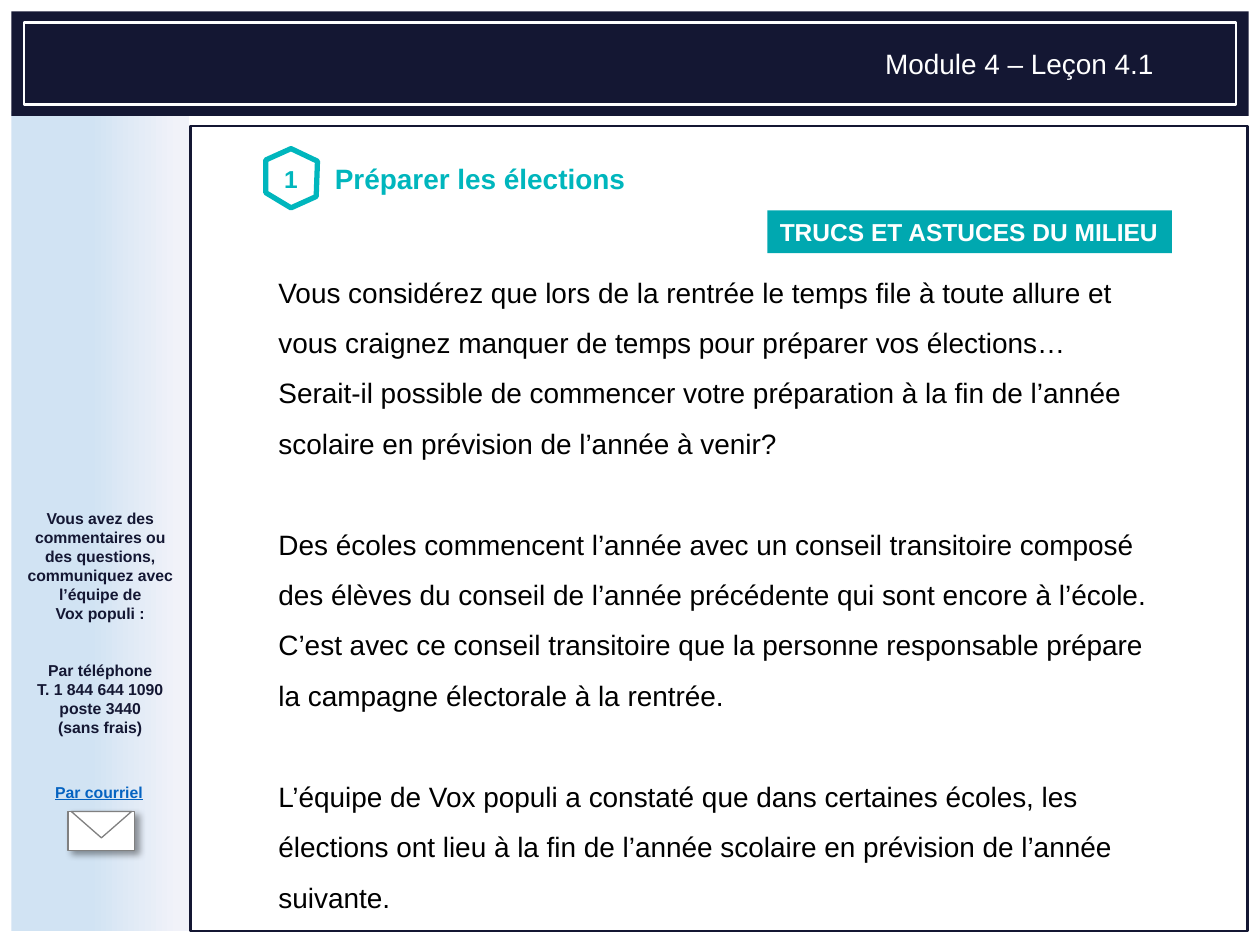
import pptx
import pptx.dml.color
import pptx.enum.shapes
import pptx.enum.text
import pptx.oxml
import pptx.oxml.ns
import pptx.util
from lxml import etree

Inches = pptx.util.Inches
Pt = pptx.util.Pt
RGBColor = pptx.dml.color.RGBColor
MSO_SHAPE = pptx.enum.shapes.MSO_SHAPE
PP_ALIGN = pptx.enum.text.PP_ALIGN
MSO_ANCHOR = pptx.enum.text.MSO_ANCHOR

NAVY = RGBColor(0x14, 0x17, 0x33)
WHITE = RGBColor(0xFF, 0xFF, 0xFF)
BLACK = RGBColor(0, 0, 0)
TEAL = RGBColor(0x00, 0xB6, 0xBD)
BANNER = RGBColor(0x00, 0xA8, 0xB0)
LINK = RGBColor(0x05, 0x63, 0xC1)
GRAY = RGBColor(0x80, 0x80, 0x80)
PALE_BLUE = RGBColor(0xD1, 0xE3, 0xF3)
PALE_LILAC = RGBColor(0xF1, 0xF2, 0xF9)

CONTACT = [
    "Vous avez des commentaires ou des questions, communiquez avec l’équipe de\vVox populi :",
    "Par téléphone\vT. 1 844 644 1090\vposte 3440\v(sans frais)",
]
BODY = [
    "Vous considérez que lors de la rentrée le temps file à toute allure et vous craignez "
    "manquer de temps pour préparer vos élections…\vSerait-il possible de commencer votre "
    "préparation à la fin de l’année scolaire en prévision de l’année à venir?",
    "Des écoles commencent l’année avec un conseil transitoire composé des élèves du conseil "
    "de l’année précédente qui sont encore à l’école. C’est avec ce conseil transitoire que "
    "la personne responsable prépare la campagne électorale à la rentrée.",
    "L’équipe de Vox populi a constaté que dans certaines écoles, les élections ont lieu à la "
    "fin de l’année scolaire en prévision de l’année suivante.",
]


def add_box(s, x, y, w, h, fill=None, line=None, width=1.5, kind=MSO_SHAPE.RECTANGLE):
    sp = s.shapes.add_shape(kind, Inches(x), Inches(y), Inches(w), Inches(h))
    sp.shadow.inherit = False
    if fill is None:
        sp.fill.background()
    else:
        sp.fill.solid()
        sp.fill.fore_color.rgb = fill
    if line is None:
        sp.line.fill.background()
    else:
        sp.line.color.rgb = line
        sp.line.width = Pt(width)
    return sp


def set_text(sp, paragraphs, size, color, bold=False, align=PP_ALIGN.LEFT,
             anchor=MSO_ANCHOR.TOP, wrap=True, gap=0, spacing=None):
    tf = sp.text_frame
    tf.word_wrap = wrap
    tf.vertical_anchor = anchor
    tf.text = "\n".join(paragraphs)
    for i, p in enumerate(tf.paragraphs):
        p.alignment = align
        p.line_spacing = spacing
        p.space_before = Pt(gap if i else 0)
        for r in p.runs:
            r.font.name = "Arial"
            r.font.size = Pt(size)
            r.font.bold = bold
            r.font.color.rgb = color


def add_text(s, x, y, w, h, paragraphs, size, color, **style):
    sp = s.shapes.add_textbox(Inches(x), Inches(y), Inches(w), Inches(h))
    set_text(sp, paragraphs, size, color, **style)
    return sp


def add_header(s, x, y, w, h):
    margin = 0.09
    add_box(s, x, y, w, h, fill=NAVY)
    add_box(s, x + 0.1, y + margin, w - 0.2, h - 2 * margin, line=WHITE)
    add_text(s, x + w - 3.03, y + 0.23, 2.42, 0.37, ["Module 4 – Leçon 4.1"],
             16, WHITE, align=PP_ALIGN.CENTER)


def add_envelope(s, x, y, w, h):
    sp = add_box(s, x, y, w, h, fill=WHITE, line=GRAY, width=0.75)
    effects = sp._element.spPr.find(pptx.oxml.ns.qn("a:effectLst"))
    effects.append(pptx.oxml.parse_xml(
        f'<a:outerShdw {pptx.oxml.ns.nsdecls("a")} blurRad="{Pt(4)}" dist="{Pt(3)}" '
        'dir="2700000" algn="tl" rotWithShape="0"><a:srgbClr val="000000">'
        '<a:alpha val="40000"/></a:srgbClr></a:outerShdw>'))
    flap = add_box(s, x + 0.025, y, w - 0.05, 0.21, fill=WHITE, line=GRAY, width=0.75,
                   kind=MSO_SHAPE.ISOSCELES_TRIANGLE)
    flap._element.spPr.get_or_add_xfrm().set("flipV", "1")


def add_sidebar(s, x, y, w, h):
    sp = add_box(s, x, y, w, h, fill=PALE_BLUE)
    sp.fill.gradient()
    sp.fill.gradient_angle = 0
    stops = [(0.44, PALE_BLUE), (0.94, PALE_LILAC)]
    for stop, (position, color) in zip(sp.fill.gradient_stops, stops):
        stop.position = position
        stop.color.rgb = color
    add_text(s, x, y + 3.11, w, 1.92, CONTACT, 9, NAVY, bold=True,
             align=PP_ALIGN.CENTER, gap=22)
    mail = add_text(s, x + 0.25, y + 5.28, 0.9, 0.25, ["Par courriel"], 9, LINK,
                    bold=True, wrap=False)
    mail.text_frame.paragraphs[0].runs[0].font.underline = True
    add_envelope(s, x + 0.45, y + 5.56, 0.53, 0.31)


def add_heading(s, x, y, number, label):
    outline = [(20, 0), (41, 10), (40, 38), (20, 47), (0, 35), (0, 9)]
    left, top = round(x * 100), round(y * 100)
    points = [(left + dx, top + dy) for dx, dy in outline]
    fb = s.shapes.build_freeform(*points[0], scale=Inches(0.01))
    fb.add_line_segments(points[1:], close=True)
    sp = fb.convert_to_shape()
    sp.shadow.inherit = False
    sp.fill.solid()
    sp.fill.fore_color.rgb = WHITE
    sp.line.color.rgb = TEAL
    sp.line.width = Pt(3)
    etree.SubElement(sp.line._ln, pptx.oxml.ns.qn("a:round"))
    add_text(s, x + 0.03, y + 0.07, 0.34, 0.34, [number], 14, TEAL, bold=True,
             align=PP_ALIGN.CENTER, anchor=MSO_ANCHOR.MIDDLE)
    add_text(s, x + 0.45, y + 0.07, 3, 0.33, [label], 16, TEAL, bold=True,
             anchor=MSO_ANCHOR.MIDDLE)


def add_content(s, x, y, w, h):
    add_box(s, x, y, w, h, line=NAVY)
    sp = s.shapes.title
    sp.left, sp.top = Inches(x + 0.6), Inches(y + 1)
    sp.width, sp.height = Inches(w - 1.2), Inches(4.43)
    set_text(sp, BODY, 16, BLACK, gap=29, spacing=1.5)
    sp.text_frame.auto_size = pptx.enum.text.MSO_AUTO_SIZE.NONE
    add_heading(s, x + 0.6, y + 0.18, "1", "Préparer les élections")
    banner = add_box(s, x + 4.58, y + 0.67, 3.21, 0.34, fill=BANNER)
    set_text(banner, ["TRUCS ET ASTUCES DU MILIEU"], 14, WHITE, bold=True,
             anchor=MSO_ANCHOR.MIDDLE, wrap=False)


def main():
    prs = pptx.Presentation()
    prs.slide_width, prs.slide_height = Inches(10), Inches(7.5)
    s = prs.slides.add_slide(prs.slide_layouts[5])
    add_sidebar(s, 0.09, 0.88, 1.41, 6.51)
    add_header(s, 0.09, 0.09, 9.82, 0.83)
    add_content(s, 1.51, 1, 8.39, 6.39)
    prs.save("out.pptx")


if __name__ == "__main__":
    main()
